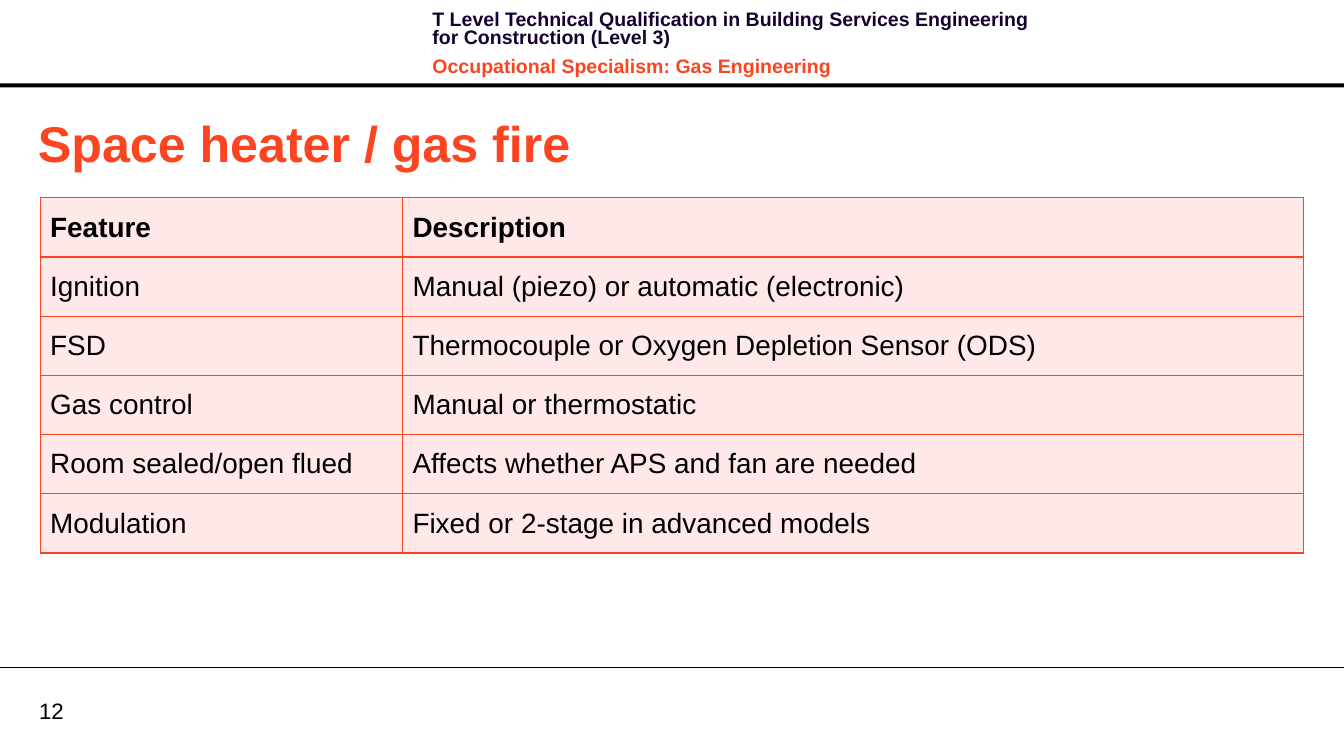
from lxml import etree
from pptx import Presentation
from pptx.dml.color import RGBColor
from pptx.enum.shapes import MSO_CONNECTOR as Link, MSO_SHAPE as Shape
from pptx.enum.text import MSO_ANCHOR as Anchor
from pptx.oxml import parse_xml
from pptx.oxml.ns import nsdecls, qn
from pptx.util import Inches, Pt

BLACK = RGBColor(0x00, 0x00, 0x00)
NAVY = RGBColor(0x17, 0x01, 0x30)
ORANGE = RGBColor(0xFC, 0x44, 0x21)
PINK = RGBColor(0xFE, 0xE9, 0xE8)

WIDTH, HEIGHT = 13.39, 7.48
COLS = (3.61, 8.98)
ROW = 0.59
FEATURES = (
    ("Feature", "Description"),
    ("Ignition", "Manual (piezo) or automatic (electronic)"),
    ("FSD", "Thermocouple or Oxygen Depletion Sensor (ODS)"),
    ("Gas control", "Manual or thermostatic"),
    ("Room sealed/open flued", "Affects whether APS and fan are needed"),
    ("Modulation", "Fixed or 2-stage in advanced models"),
)


class Page:
    """Holds the slide and its shared style."""

    face = "Arial"

    def __init__(self, slide):
        self.slide = slide
        self.shapes = slide.shapes

    def style(self, para, size, color, bold=False):
        font = para.font
        font.name, font.size, font.bold = self.face, Pt(size), bold
        font.color.rgb = color

    def bar(self, x, y, w, h, color):
        bar = self.shapes.add_shape(
            Shape.RECTANGLE, Inches(x), Inches(y), Inches(w), Inches(h))
        bar.shadow.inherit = False
        bar.fill.solid()
        bar.fill.fore_color.rgb = color
        bar.line.fill.background()

    def rule(self, y, color, width):
        """Draws a line across the whole slide."""
        rule = self.shapes.add_connector(
            Link.STRAIGHT, 0, Inches(y), Inches(WIDTH), Inches(y))
        rule.line.color.rgb = color
        rule.line.width = Pt(width)
        etree.SubElement(rule._element.spPr, qn("a:effectLst"))

    def text(self, x, y, w, h, lines, size, bold=False,
             anchor=Anchor.MIDDLE, inset=(0.1, 0.05), lead=None, gap=0):
        """Adds one paragraph for each (words, color) pair in lines."""
        box = self.shapes.add_textbox(
            Inches(x), Inches(y), Inches(w), Inches(h))
        frame = box.text_frame
        frame.word_wrap = True
        frame.vertical_anchor = anchor
        frame.margin_left = frame.margin_right = Inches(inset[0])
        frame.margin_top = frame.margin_bottom = Inches(inset[1])
        for i, (words, color) in enumerate(lines):
            para = frame.add_paragraph() if i else frame.paragraphs[0]
            para.text = words
            para.space_before = Pt(gap if i else 0)
            para.space_after = Pt(gap)
            if lead:
                para.line_spacing = Pt(lead)
            self.style(para, size, color, bold)

    def border(self, cell, color, width):
        props = cell._tc.get_or_add_tcPr()
        for i, side in enumerate("LRTB"):
            props.insert(i, parse_xml(
                f'<a:ln{side} {nsdecls("a")} w="{Pt(width)}"><a:solidFill>'
                f'<a:srgbClr val="{color}"/></a:solidFill></a:ln{side}>'))

    def table(self, x, y, cols, row, data, size):
        table = self.shapes.add_table(
            len(data), len(cols), Inches(x), Inches(y),
            Inches(sum(cols)), Inches(row * len(data))).table
        table.first_row = table.horz_banding = False
        for col, width in zip(table.columns, cols):
            col.width = Inches(width)
        for r, words in enumerate(data):
            table.rows[r].height = Inches(row)
            for c, word in enumerate(words):
                cell = table.cell(r, c)
                cell.text = word
                cell.vertical_anchor = Anchor.MIDDLE
                cell.fill.solid()
                cell.fill.fore_color.rgb = PINK
                self.border(cell, ORANGE, 1)
                self.style(cell.text_frame.paragraphs[0], size, BLACK, r == 0)


def main():
    deck = Presentation()
    deck.slide_width, deck.slide_height = Inches(WIDTH), Inches(HEIGHT)
    page = Page(deck.slides.add_slide(deck.slide_layouts[6]))

    page.bar(0, 0.83, WIDTH, 0.04, BLACK)
    page.text(0.39, 6.94, 0.64, 0.27, [("12", BLACK)], 16, inset=(0, 0))
    page.rule(6.65, BLACK, 0.75)
    course = ("T Level Technical Qualification in Building Services "
              "Engineering for Construction (Level 3)")
    topic = "Occupational Specialism: Gas Engineering"
    page.text(4.21, 0.07, 6.37, 0.64, [(course, NAVY), (topic, ORANGE)], 14,
              bold=True, anchor=Anchor.TOP, lead=13.1, gap=4)
    page.text(0.28, 1.06, 12.72, 0.71,
              [("Space heater / gas fire", ORANGE)], 36, bold=True)
    page.table(0.4, 1.97, COLS, ROW, FEATURES, 20)

    deck.save("out.pptx")


if __name__ == "__main__":
    main()
